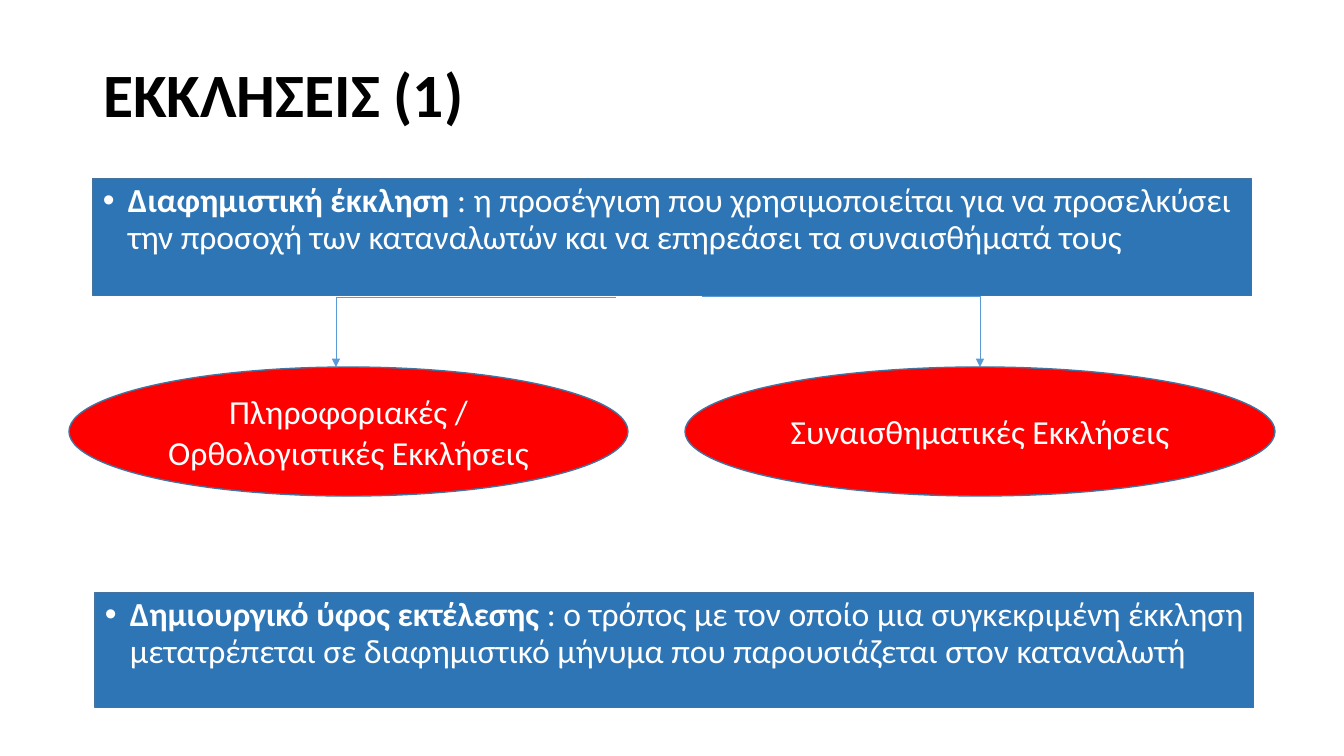
import pptx
import pptx.dml.color
import pptx.enum.shapes
import pptx.enum.text
import pptx.oxml.ns
import pptx.util
from lxml import etree

HEADING = ("ΕΚΚΛΗΣΕΙΣ (1)", (93, 40, 1159, 115))
DEFINITIONS = [
    ("Διαφημιστική έκκληση ",
     ": η προσέγγιση που χρησιμοποιείται για να προσελκύσει την προσοχή των "
     "καταναλωτών και να επηρεάσει τα συναισθήματά τους",
     (93, 179, 1159, 117)),
    ("Δημιουργικό ύφος εκτέλεσης ",
     ": ο τρόπος με τον οποίο μια συγκεκριμένη έκκληση μετατρέπεται σε "
     "διαφημιστικό μήνυμα που παρουσιάζεται στον καταναλωτή",
     (95, 593, 1159, 115)),
]
APPEALS = [
    ("Πληροφοριακές / Ορθολογιστικές Εκκλήσεις", (69, 367, 559, 129)),
    ("Συναισθηματικές Εκκλήσεις", (685, 367, 590, 129)),
]
BRANCHES = [(702, 296, 980, 367), (616, 297, 336, 367)]
COLORS = {"heading": "000000", "definition": "2E75B6", "appeal": "FF0000",
          "outline": "43739E", "branch": "5B9BD5", "text": "FFFFFF"}
FONT = "Calibri"
EMU_PER_PX = 914400 / 100.8
INDENT = 25


def px(*lengths):
    return [pptx.util.Emu(round(length * EMU_PER_PX)) for length in lengths]


def color(name):
    return pptx.dml.color.RGBColor.from_string(COLORS[name])


def format_run(run, size, color_name, bold=False):
    run.font.name = FONT
    run.font.size = pptx.util.Pt(size)
    run.font.bold = bold
    run.font.color.rgb = color(color_name)


def add_panel(slide, preset, box, fill, line_width, anchor, alignment):
    panel = slide.shapes.add_shape(preset, *px(*box))
    panel.shadow.inherit = False
    panel.fill.solid()
    panel.fill.fore_color.rgb = color(fill)
    panel.line.color.rgb = color("outline")
    panel.line.width = pptx.util.Pt(line_width)
    panel.text_frame.word_wrap = True
    panel.text_frame.vertical_anchor = anchor
    paragraph = panel.text_frame.paragraphs[0]
    paragraph.alignment = alignment
    return paragraph


def add_definition(slide, term, meaning, box):
    paragraph = add_panel(
        slide, pptx.enum.shapes.MSO_SHAPE.RECTANGLE, box, "definition", 0.75,
        pptx.enum.text.MSO_ANCHOR.TOP, pptx.enum.text.PP_ALIGN.LEFT)
    paragraph.line_spacing = 0.9
    paragraph.space_before = pptx.util.Pt(10)
    for words, bold in ((term, True), (meaning, False)):
        run = paragraph.add_run()
        run.text = words
        format_run(run, 24, "text", bold)
    properties = paragraph._p.get_or_add_pPr()
    indent = px(INDENT)[0]
    properties.set("marL", str(indent))
    properties.set("indent", str(-indent))
    etree.SubElement(properties, pptx.oxml.ns.qn("a:buFont"), typeface="Arial")
    etree.SubElement(properties, pptx.oxml.ns.qn("a:buChar"), char="•")


def add_appeal(slide, label, box):
    paragraph = add_panel(
        slide, pptx.enum.shapes.MSO_SHAPE.OVAL, box, "appeal", 1,
        pptx.enum.text.MSO_ANCHOR.MIDDLE, pptx.enum.text.PP_ALIGN.CENTER)
    paragraph.text = label
    format_run(paragraph.runs[0], 24, "text")


def add_branch(slide, ends):
    branch = slide.shapes.add_connector(
        pptx.enum.shapes.MSO_CONNECTOR.ELBOW, *px(*ends))
    branch.line.color.rgb = color("branch")
    branch.line.width = pptx.util.Pt(0.5)
    properties = branch._element.spPr
    properties.find(pptx.oxml.ns.qn("a:prstGeom")).set("prst", "bentConnector2")
    etree.SubElement(branch.line._get_or_add_ln(),
                     pptx.oxml.ns.qn("a:tailEnd"), type="triangle")
    etree.SubElement(properties, pptx.oxml.ns.qn("a:effectLst"))


def add_heading(slide, words, box):
    heading = slide.shapes.title
    heading.left, heading.top, heading.width, heading.height = px(*box)
    frame = heading.text_frame
    frame.text = words
    frame.auto_size = pptx.enum.text.MSO_AUTO_SIZE.NONE
    frame.vertical_anchor = pptx.enum.text.MSO_ANCHOR.MIDDLE
    paragraph = frame.paragraphs[0]
    paragraph.alignment = pptx.enum.text.PP_ALIGN.LEFT
    paragraph.line_spacing = 0.9
    format_run(paragraph.runs[0], 44, "heading", True)


def main():
    deck = pptx.Presentation()
    deck.slide_width, deck.slide_height = px(1344, 756)
    slide = deck.slides.add_slide(deck.slide_layouts[5])
    add_heading(slide, *HEADING)
    appeal_definition, style_definition = DEFINITIONS
    add_definition(slide, *appeal_definition)
    for ends in BRANCHES:
        add_branch(slide, ends)
    for label, box in APPEALS:
        add_appeal(slide, label, box)
    add_definition(slide, *style_definition)
    deck.save("out.pptx")


if __name__ == "__main__":
    main()
